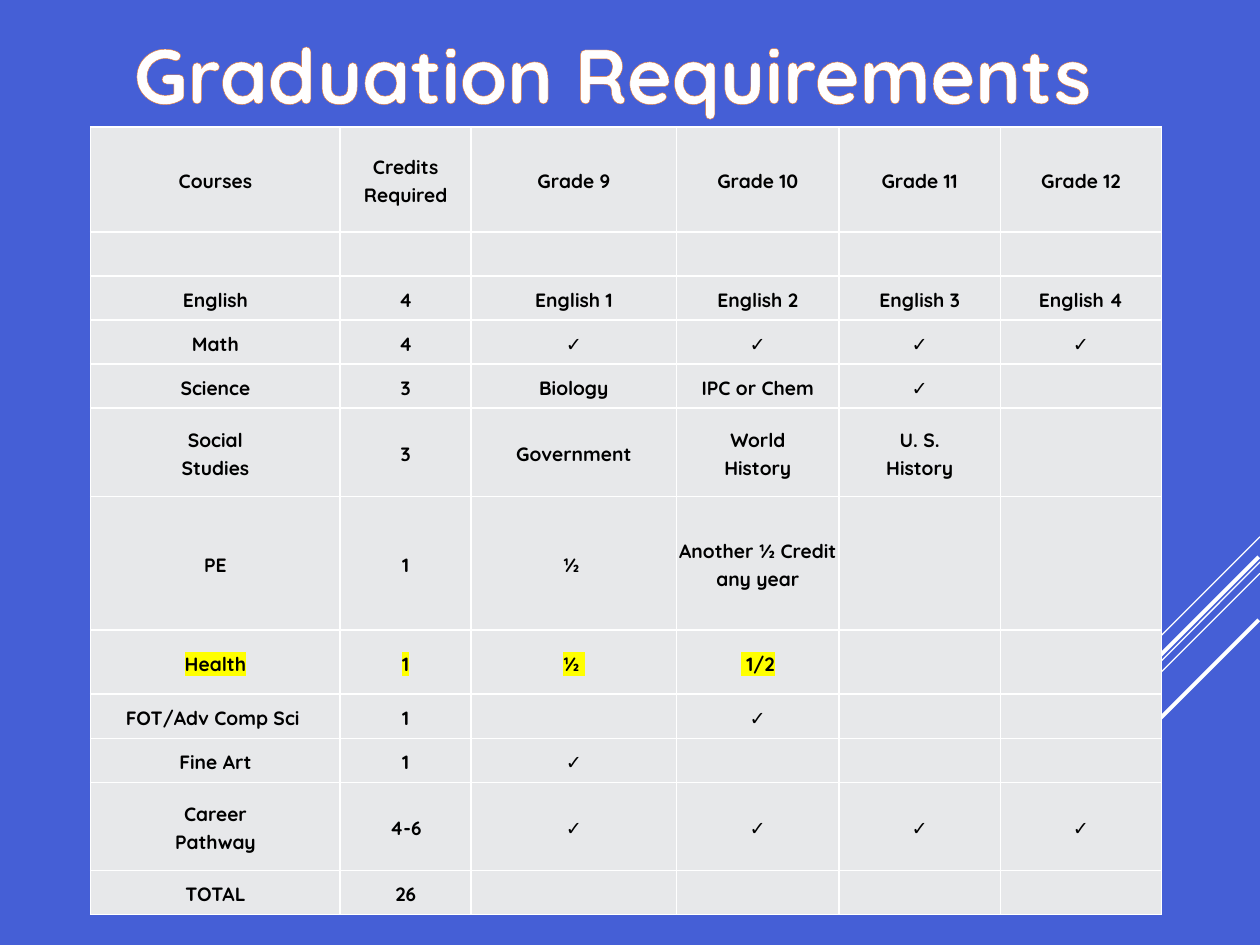
from dataclasses import dataclass

from lxml import etree
from pptx import Presentation
from pptx import util as u
from pptx.dml.color import RGBColor
from pptx.enum import shapes, text
from pptx.oxml import ns


@dataclass(frozen=True)
class Theme:
    font: str = "Quicksand"
    background: str = "455FD6"
    white: str = "FFFFFF"
    black: str = "000000"
    cell: str = "E7E8EA"
    highlight: str = "FFFF00"
    title_outline: str = "E87D37"
    title_size: float = 44
    table_size: float = 11
    title_outline_width: float = 0.8
    border_width: float = 1
    thin_line: float = 0.75
    thick_line: float = 2.25


THEME = Theme()

COLUMN_WIDTHS = [1.98, 1.04, 1.63, 1.29, 1.28, 1.28]
COURSE_ROWS = [
    (0.83, ["Courses", "Credits Required", "Grade 9", "Grade 10", "Grade 11", "Grade 12"]),
    (0.35, []),
    (0.35, ["English", "4", "English 1", "English 2", "English 3", "English 4"]),
    (0.35, ["Math", "4", "✓", "✓", "✓", "✓"]),
    (0.35, ["Science", "3", "Biology", "IPC or Chem", "✓"]),
    (0.7, ["Social\nStudies", "3", "Government", "World\nHistory", "U. S.\nHistory"]),
    (1.06, ["PE", "1", "½ ", "Another ½ Credit any year"]),
    (0.51, ["Health", "1", "½ ", " 1/2"]),
    (0.35, ["FOT/Adv Comp Sci ", "1", "", "✓"]),
    (0.35, ["Fine Art", "1", "✓"]),
    (0.7, ["Career\nPathway", "4-6", "✓", "✓", "✓", "✓"]),
    (0.35, ["TOTAL", "26"]),
]
HIGHLIGHTED_COURSE = "Health"

# Start x, start y, end x, end y, width
DIAGONALS = [
    (10, 4.26, 9.17, 5.09, THEME.thin_line),
    (10, 4.46, 7.3, 7.17, THEME.thin_line),
    (10, 4.55, 8.28, 6.27, THEME.thin_line),
    (9.99, 4.42, 8.42, 5.99, THEME.thick_line),
    (9.99, 4.92, 8.85, 6.06, THEME.thick_line),
]


def color_element(tag, color):
    element = etree.Element(ns.qn(tag))
    etree.SubElement(element, ns.qn("a:srgbClr"), val=color)
    return element


def line_element(tag, color, width):
    element = etree.Element(ns.qn(tag), w=str(u.Pt(width)))
    element.append(color_element("a:solidFill", color))
    return element


def add_run(paragraph, words, size, color):
    run = paragraph.add_run()
    run.text = words
    run.font.name = THEME.font
    run.font.size = u.Pt(size)
    run.font.bold = True
    run.font.color.rgb = RGBColor.from_string(color)
    return run


def add_diagonals(slide):
    for start_x, start_y, end_x, end_y, width in DIAGONALS:
        line = slide.shapes.add_connector(
            shapes.MSO_CONNECTOR.STRAIGHT,
            u.Inches(start_x), u.Inches(start_y), u.Inches(end_x), u.Inches(end_y))
        line.line.color.rgb = RGBColor.from_string(THEME.white)
        line.line.width = u.Pt(width)
        etree.SubElement(line._element.spPr, ns.qn("a:effectLst"))


def place_title(slide, left, top, width, height):
    title = slide.shapes.title
    title.left, title.top = u.Inches(left), u.Inches(top)
    title.width, title.height = u.Inches(width), u.Inches(height)
    title.text_frame.word_wrap = True
    title.text_frame.auto_size = text.MSO_AUTO_SIZE.SHAPE_TO_FIT_TEXT
    paragraph = title.text_frame.paragraphs[0]
    paragraph.alignment = text.PP_ALIGN.CENTER
    run = add_run(paragraph, "Graduation Requirements", THEME.title_size, THEME.white)
    outline = line_element("a:ln", THEME.title_outline, THEME.title_outline_width)
    run.font._element.insert(0, outline)


def style_cell(cell):
    cell.margin_left = cell.margin_right = cell.margin_top = cell.margin_bottom = 0
    cell.vertical_anchor = text.MSO_ANCHOR.MIDDLE
    properties = cell._tc.get_or_add_tcPr()
    for side in ("a:lnL", "a:lnR", "a:lnT", "a:lnB"):
        properties.append(line_element(side, THEME.white, THEME.border_width))
    cell.fill.solid()
    cell.fill.fore_color.rgb = RGBColor.from_string(THEME.cell)


def fill_cell(cell, words, highlighted):
    for index, line in enumerate(words.split("\n")):
        frame = cell.text_frame
        paragraph = frame.add_paragraph() if index else frame.paragraphs[0]
        paragraph.alignment = text.PP_ALIGN.CENTER
        paragraph.line_spacing = 1.15
        run = add_run(paragraph, line, THEME.table_size, THEME.black)
        if highlighted:
            fill = run.font._element.find(ns.qn("a:solidFill"))
            fill.addnext(color_element("a:highlight", THEME.highlight))


def add_course_table(slide, left, top, width, height):
    table = slide.shapes.add_table(
        len(COURSE_ROWS), len(COLUMN_WIDTHS),
        u.Inches(left), u.Inches(top), u.Inches(width), u.Inches(height)).table
    table.first_row = table.horz_banding = False
    for column, column_width in zip(table.columns, COLUMN_WIDTHS):
        column.width = u.Inches(column_width)
    for row, (row_height, entries) in zip(table.rows, COURSE_ROWS):
        row.height = u.Inches(row_height)
        for cell in row.cells:
            style_cell(cell)
        for cell, words in zip(row.cells, entries):
            if words:
                fill_cell(cell, words, entries[0] == HIGHLIGHTED_COURSE)


def main():
    presentation = Presentation()
    presentation.slide_width = u.Inches(10)
    presentation.slide_height = u.Inches(7.5)
    slide = presentation.slides.add_slide(presentation.slide_layouts[5])
    slide.background.fill.solid()
    slide.background.fill.fore_color.rgb = RGBColor.from_string(THEME.background)
    add_diagonals(slide)
    add_course_table(slide, 0.72, 1.01, 8.5, 6.22)
    place_title(slide, 0.78, 0.16, 8.17, 0.84)
    presentation.save("out.pptx")


if __name__ == "__main__":
    main()
